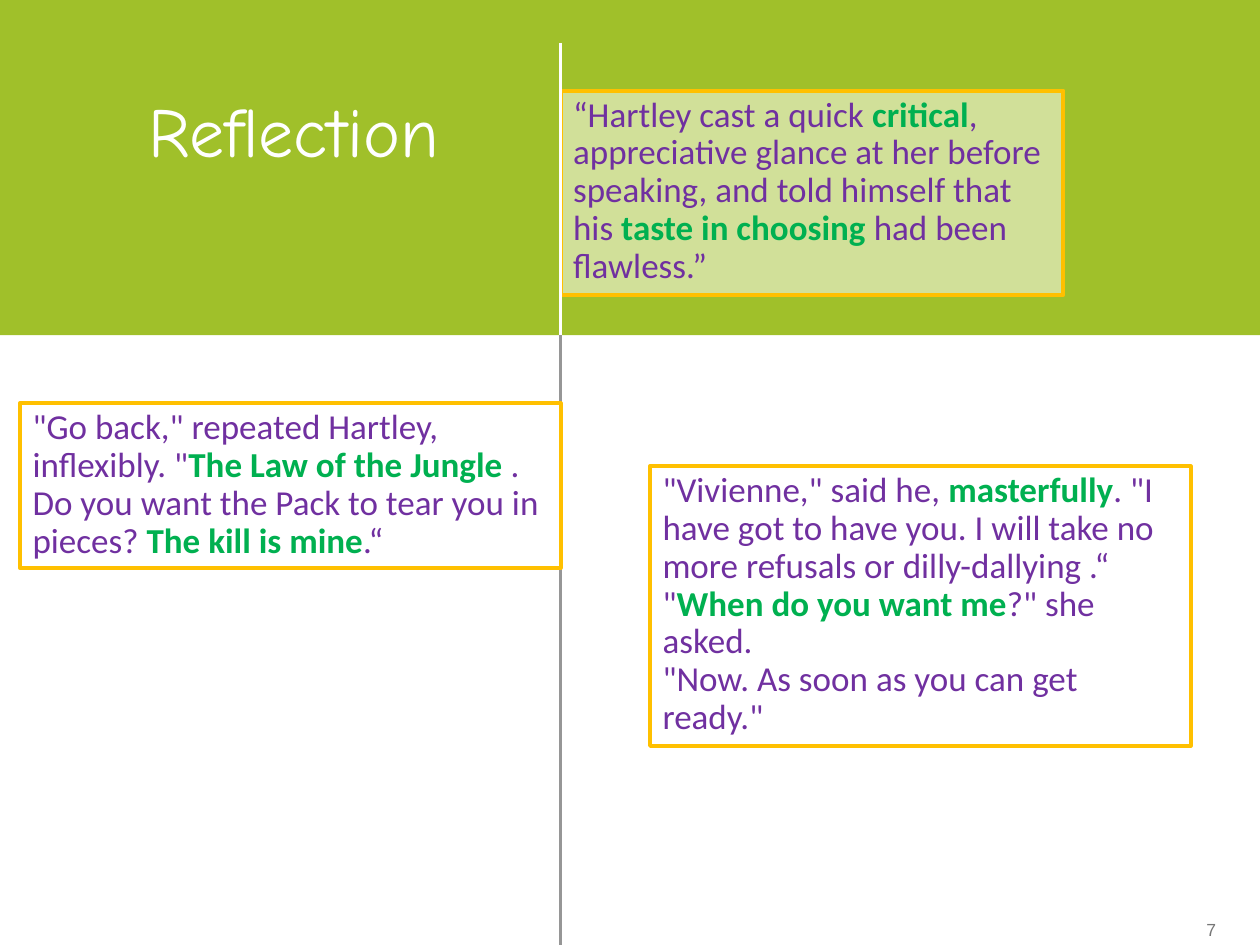
from lxml import etree
from pptx import Presentation
from pptx.dml.color import RGBColor
from pptx.enum import shapes, text
from pptx.oxml import ns
from pptx.util import Inches, Pt

LEFT, RIGHT = text.PP_ALIGN.LEFT, text.PP_ALIGN.RIGHT
TOP, BOTTOM = text.MSO_ANCHOR.TOP, text.MSO_ANCHOR.BOTTOM


def rgb(code):
    return RGBColor.from_string(code)


def write(frame, words, size=20, font="Calibri", color="7030A0", accent="00B050",
          align=LEFT, anchor=TOP, gap=0.9, wrap=True):
    """Fill a frame: one paragraph a line, with *starred* words bold in the accent."""
    frame.word_wrap = wrap
    frame.vertical_anchor = anchor
    for i, line in enumerate(words.split("\n")):
        para = frame.add_paragraph() if i else frame.paragraphs[0]
        para.alignment = align
        para.line_spacing = gap
        for j, part in enumerate(line.split("*")):
            if not part:
                continue
            run = para.add_run()
            run.text = part
            run.font.name = font
            run.font.size = Pt(size)
            run.font.bold = j % 2 == 1
            run.font.color.rgb = rgb(accent if j % 2 else color)


class Page:
    green, grey, white, gold = "A0C02A", "969696", "FFFFFF", "FFC000"
    axis = 4.45
    fold = 2.66

    def __init__(self, slide):
        self.shapes = slide.shapes

    def rect(self, x, y, w, h, fill):
        box = self.shapes.add_shape(shapes.MSO_SHAPE.RECTANGLE,
                                    Inches(x), Inches(y), Inches(w), Inches(h))
        box.shadow.inherit = False
        box.fill.solid()
        box.fill.fore_color.rgb = rgb(fill)
        box.line.fill.background()
        return box

    def quote(self, x, y, w, h, words):
        """Add a gold-edged, half-clear box with a quotation."""
        box = self.rect(x, y, w, h, self.white)
        tint = box._element.spPr.find(ns.qn("a:solidFill"))[0]
        etree.SubElement(tint, ns.qn("a:alpha"), val="52000")
        box.line.color.rgb = rgb(self.gold)
        box.line.width = Pt(2.25)
        write(box.text_frame, words)

    def label(self, x, y, w, h, words, **style):
        box = self.shapes.add_textbox(Inches(x), Inches(y), Inches(w), Inches(h))
        write(box.text_frame, words, **style)

    def rule(self, top, end, color):
        """Draw a stretch of the upright axis."""
        line = self.shapes.add_connector(shapes.MSO_CONNECTOR.STRAIGHT,
                                         Inches(self.axis), Inches(top),
                                         Inches(self.axis), Inches(end))
        line.line.color.rgb = rgb(color)
        line.line.width = Pt(1.5)
        etree.SubElement(line._element.spPr, ns.qn("a:effectLst"))


def main():
    deck = Presentation()
    deck.slide_width, deck.slide_height = Inches(10), Inches(7.5)
    page = Page(deck.slides.add_slide(deck.slide_layouts[6]))

    page.label(9.4, 7.25, 0.35, 0.26, "7", size=10, font="Arial", color="777777",
               align=RIGHT, anchor=BOTTOM, gap=1.0, wrap=False)
    page.rect(0, 0, 10, page.fold, page.green)
    page.quote(page.axis, 0.72, 3.99, 1.62,
               "“Hartley cast a quick *critical*, appreciative glance at her before "
               "speaking, and told himself that his *taste in choosing* had been flawless.”")
    page.rule(1.74, 7.5, page.grey)
    page.rule(0.34, page.fold, page.white)
    page.quote(5.16, 3.7, 4.29, 2.22,
               "\"Vivienne,\" said he, *masterfully*. \"I have got to have you. "
               "I will take no more refusals or dilly-dallying .“\n"
               "\"*When do you want me*?\" she asked.\n"
               "\"Now. As soon as you can get ready.\"")
    page.label(0.3, 0.72, 3.47, 0.71, "Reflection ", size=40, font="Comic Neue",
               color=page.white, align=RIGHT)
    page.quote(0.16, 3.2, 4.29, 1.31,
               "\"Go back,\" repeated Hartley, inflexibly. \"*The Law of the Jungle* . "
               "Do you want the Pack to tear you in pieces? *The kill is mine*.“")
    deck.save("out.pptx")


if __name__ == "__main__":
    main()
